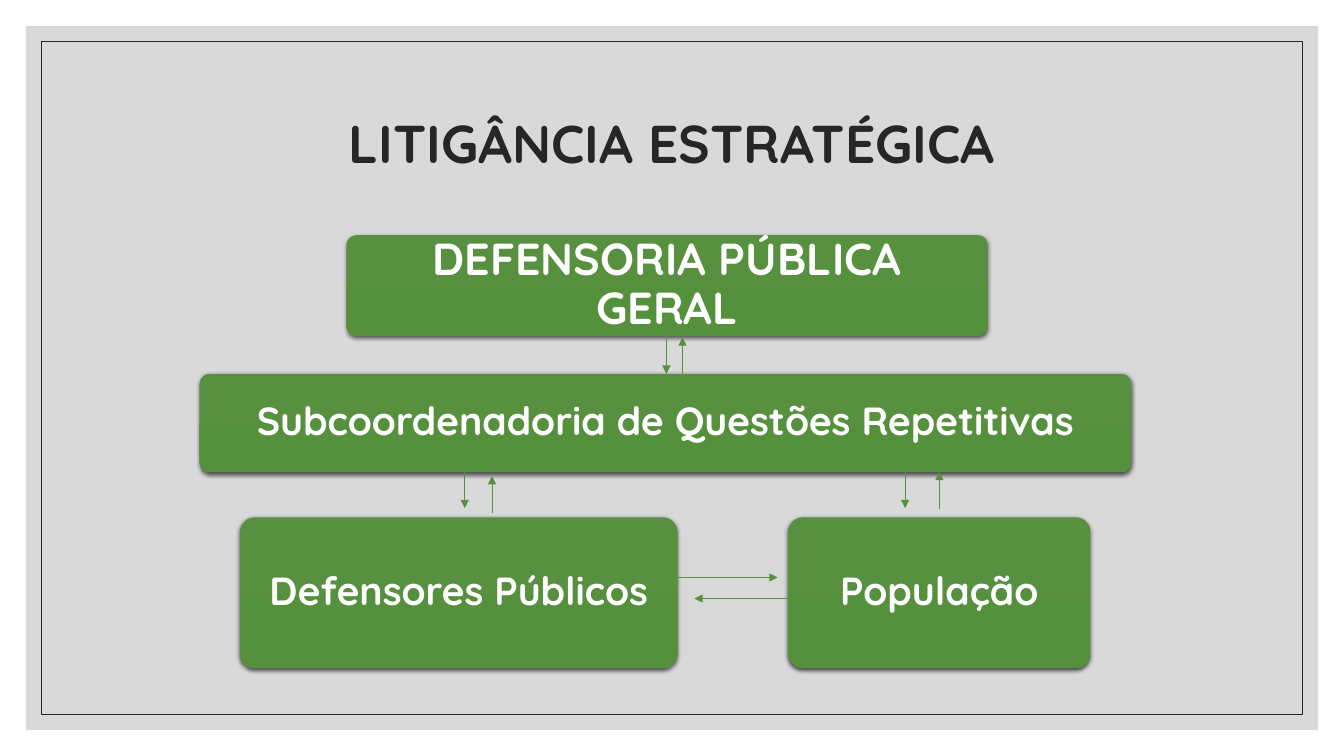
from lxml import etree
from pptx import Presentation
from pptx import util as u
from pptx.dml.color import RGBColor
from pptx.enum import shapes, text
from pptx.oxml import parse_xml
from pptx.oxml.ns import nsdecls, qn

Pt = u.Pt
FONT = "Quicksand"
GREY = RGBColor(0xD9, 0xD9, 0xD9)
DARK = RGBColor(0x26, 0x26, 0x26)
GREEN = RGBColor(0x57, 0x90, 0x3F)
DEEP = RGBColor(0x55, 0x91, 0x3C)
WHITE = RGBColor(0xFF, 0xFF, 0xFF)
WIDE, HIGH = 960, 540

TOP = (247.5, 168, 458, 72)
SUB = (142.5, 267, 665.5, 70.5)
LEFT = (171.5, 369.5, 312.5, 108)
RIGHT = (563, 369.5, 216, 108)


def frame(slide, gap, fill=None):
    """Draw a rectangle at an even gap from the slide edges."""
    rect = slide.shapes.add_shape(
        shapes.MSO_SHAPE.RECTANGLE, Pt(gap), Pt(gap),
        Pt(WIDE - 2 * gap), Pt(HIGH - 2 * gap))
    rect.shadow.inherit = False
    if fill is None:
        rect.fill.background()
        rect.line.color.rgb = DARK
        rect.line.width = Pt(0.5)
    else:
        rect.fill.solid()
        rect.fill.fore_color.rgb = fill
        rect.line.fill.background()


def write(body, words, size, color):
    """Set one centred bold paragraph in a text frame."""
    body.word_wrap = True
    body.auto_size = text.MSO_AUTO_SIZE.NONE
    body.vertical_anchor = text.MSO_ANCHOR.MIDDLE
    para = body.paragraphs[0]
    para.text = words
    para.alignment = text.PP_ALIGN.CENTER
    para.line_spacing = 0.9
    font = para.font
    font.name, font.size, font.bold = FONT, Pt(size), True
    font.color.rgb = color


def head(slide, box, words):
    """Place the title in its box, in front of the frames."""
    title = slide.shapes.title
    title.left, title.top, title.width, title.height = map(Pt, box)
    write(title.text_frame, words, 38, DARK)
    slide.shapes.element.append(title.element)


def card(slide, box, words, size=28):
    """Draw a green rounded card with a soft shadow."""
    shape = slide.shapes.add_shape(
        shapes.MSO_SHAPE.ROUNDED_RECTANGLE, *map(Pt, box))
    shape.adjustments[0] = 0.1
    shape.line.fill.background()
    shape.fill.gradient()
    shape.fill.gradient_angle = 270
    for stop, color in zip(shape.fill.gradient_stops, (GREEN, DEEP)):
        stop.color.rgb = color
    shape.shadow.inherit = False
    glow = shape.element.spPr.find(qn("a:effectLst"))
    glow.append(parse_xml(
        f'<a:outerShdw {nsdecls("a")} blurRad="{Pt(3)}" dist="{Pt(1)}" '
        'dir="5400000" algn="ctr" rotWithShape="0"><a:srgbClr val="000000">'
        '<a:alpha val="63000"/></a:srgbClr></a:outerShdw>'))
    body = shape.text_frame
    body.margin_left = body.margin_right = Pt(6)
    body.margin_top = body.margin_bottom = Pt(3)
    write(body, words, size, WHITE)


def arrow(slide, *ends):
    """Draw a thin green arrow from x, y to x, y."""
    line = slide.shapes.add_connector(
        shapes.MSO_CONNECTOR.STRAIGHT, *map(Pt, ends))
    line.line.color.rgb = GREEN
    line.line.width = Pt(0.5)
    tip = etree.SubElement(line.line._get_or_add_ln(), qn("a:tailEnd"))
    tip.set("type", "triangle")
    etree.SubElement(line.element.spPr, qn("a:effectLst"))


def flow(slide):
    """Draw the cards and the arrows between them."""
    card(slide, LEFT, "Defensores Públicos")
    card(slide, RIGHT, "População")
    card(slide, TOP, "DEFENSORIA PÚBLICA GERAL", 32)
    card(slide, SUB, "Subcoordenadoria de Questões Repetitivas")
    foot, base = TOP[1] + TOP[3], SUB[1] + SUB[3]
    arrow(slide, 476, foot, 476, SUB[1])
    arrow(slide, 487.5, SUB[1], 487.5, foot + 1)
    for down, up, low in ((332, 351.5, 366.5), (646.5, 671, 363.5)):
        arrow(slide, down, base - 2, down, base + 25.5)
        arrow(slide, up, low, up, low - 26.5)
    edge = LEFT[0] + LEFT[2]
    arrow(slide, edge, 412.5, edge + 71.5, 412.5)
    arrow(slide, RIGHT[0], 427.5, RIGHT[0] - 67, 427.5)


def main():
    """Build and save the slide."""
    deck = Presentation()
    deck.slide_width, deck.slide_height = Pt(WIDE), Pt(HIGH)
    slide = deck.slides.add_slide(deck.slide_layouts[5])
    frame(slide, 18.5, GREY)
    frame(slide, 29.5)
    head(slide, (84, 50.5, 792, 108), "LITIGÂNCIA ESTRATÉGICA")
    flow(slide)
    deck.save("out.pptx")


if __name__ == "__main__":
    main()
